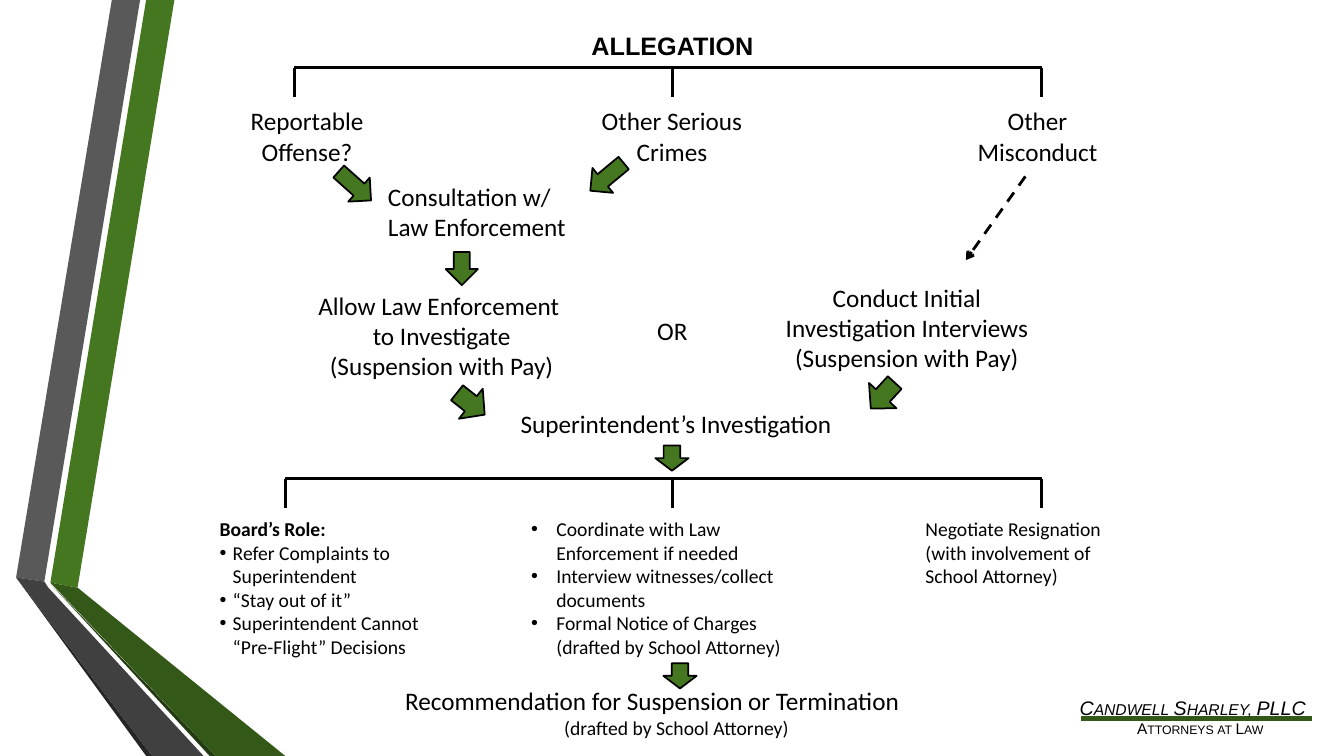
from dataclasses import dataclass

from lxml.etree import SubElement
from pptx import Presentation
from pptx.dml.color import RGBColor
from pptx.enum.dml import MSO_LINE
from pptx.enum.shapes import MSO_CONNECTOR, MSO_SHAPE
from pptx.enum.text import MSO_AUTO_SIZE, PP_ALIGN
from pptx.oxml.ns import qn
from pptx.util import Inches, Pt

COLORS = {
    "black": "000000", "green": "457620", "moss": "345818", "pine": "233B10",
    "gray": "595959", "slate": "404040", "coal": "262626",
}
LEFT, CENTER = PP_ALIGN.LEFT, PP_ALIGN.CENTER


@dataclass
class Band:
    color: str
    points: list[tuple[float, float]]


@dataclass
class Para:
    text: str
    size: float = 18
    bold: bool = False
    italic: bool = False
    font: str = "Calibri"
    align: PP_ALIGN = CENTER
    left: float = 0
    hang: float = 0
    bullet: bool = False
    small: bool = False


@dataclass
class Label:
    x: float
    y: float
    width: float
    height: float
    paras: list[Para]
    grow: bool = True


@dataclass
class Arrow:
    x: float
    y: float
    width: float
    height: float
    turn: float = 0


@dataclass
class Fork:
    """A level bar with a short drop at each of its stops."""
    y: float
    stops: tuple[float, ...]


def plain(*lines: str, align: PP_ALIGN = CENTER, size: float = 18) -> list[Para]:
    return [Para(line, size, align=align) for line in lines]


def item(text: str, hang: float) -> Para:
    return Para(text, 14, align=LEFT, left=hang, hang=hang, bullet=True)


BANDS = [
    Band("green", [(0.5, 5.78), (0.77, 5.83), (1.73, 0), (1.45, 0)]),
    Band("gray", [(1.39, 0), (1.11, 0), (0.16, 5.73), (0.44, 5.77)]),
    Band("coal", [(0.16, 5.73), (1.45, 7.5), (1.51, 7.5)]),
    Band("pine", [(0.5, 5.79), (2.08, 7.5), (2.14, 7.5)]),
    Band("moss", [(0.5, 5.78), (2.14, 7.5), (2.83, 7.5), (0.77, 5.83)]),
    Band("slate", [(2.02, 7.5), (0.48, 5.83), (0.44, 5.77), (0.16, 5.73), (1.51, 7.5)]),
]

LABELS = [
    Label(10.61, 6.85, 2.7, 0.6, [
        Para("Candwell Sharley, PLLC", 14, italic=True, font="Arial", align=LEFT, small=True),
        Para("Attorneys at Law", 11, font="Arial", align=LEFT, left=0.57, small=True),
    ], grow=False),
    Label(5.67, 0.25, 2, 0.4, [Para("ALLEGATION", bold=True, font="Arial")]),
    Label(2.17, 1, 1.75, 0.71, plain("Reportable", "Offense?")),
    Label(5.75, 1, 1.83, 0.71, plain("Other Serious", "Crimes")),
    Label(9.5, 1, 1.58, 0.71, plain("Other Misconduct")),
    Label(3.75, 1.75, 2.17, 0.71, plain("Consultation w/ Law Enforcement", align=LEFT)),
    Label(7.58, 2.75, 2.83, 1.01,
          plain("Conduct Initial Investigation Interviews", "(Suspension with Pay)")),
    Label(2.92, 2.83, 2.92, 1.01,
          plain("Allow Law Enforcement ", "to Investigate", "(Suspension with Pay)")),
    Label(6.42, 3.08, 0.58, 0.4, plain("OR", align=LEFT)),
    Label(4.83, 4, 3.75, 0.4, plain("Superintendent’s Investigation")),
    Label(2.08, 5.08, 2.92, 1.51, [
        Para("Board’s Role:", 14, bold=True, align=LEFT),
        item("Refer Complaints to Superintendent", 0.13),
        item("“Stay out of it”", 0.13),
        item("Superintendent Cannot", 0.13),
        Para("“Pre-Flight” Decisions", 14, align=LEFT, left=0.13),
    ]),
    Label(5.17, 5.08, 3, 1.51, [
        item("Coordinate with Law Enforcement if needed", 0.25),
        item("Interview witnesses/collect documents", 0.25),
        item("Formal Notice of Charges (drafted by School Attorney)", 0.25),
    ]),
    Label(9.08, 5.08, 2.33, 0.81,
          plain("Negotiate Resignation", "(with involvement of", "School Attorney)",
                align=LEFT, size=14)),
    Label(3.92, 6.75, 5.58, 0.64, [
        Para("Recommendation for Suspension or Termination", align=LEFT),
        Para("(drafted by School Attorney)", 14),
    ]),
]

FORKS = [Fork(0.67, (2.92, 6.67, 10.33)), Fork(4.75, (2.83, 6.67, 10.33))]
DROP = 0.29

ARROWS = [
    Arrow(6.5, 4.42, 0.33, 0.25),
    Arrow(6.58, 6.58, 0.33, 0.25),
    Arrow(4.48, 3.83, 0.38, 0.35, 308.4),
    Arrow(8.57, 3.75, 0.37, 0.35, 42.6),
    Arrow(4.42, 2.5, 0.32, 0.33),
    Arrow(5.86, 1.54, 0.32, 0.43, 50.3),
    Arrow(3.36, 1.63, 0.32, 0.43, 311.8),
]


def rgb(name: str) -> RGBColor:
    return RGBColor.from_string(COLORS[name])


def paint(shape, name: str) -> None:
    shape.shadow.inherit = False
    shape.fill.solid()
    shape.fill.fore_color.rgb = rgb(name)


def add_band(shapes, band: Band) -> None:
    spots = [(Inches(x), Inches(y)) for x, y in band.points]
    pen = shapes.build_freeform(*spots[0])
    pen.add_line_segments(spots[1:], close=True)
    shape = pen.convert_to_shape()
    paint(shape, band.color)
    shape.line.fill.background()


def add_line(shapes, start: tuple[float, float], end: tuple[float, float],
             color: str = "black", width: float = 2):
    line = shapes.add_connector(MSO_CONNECTOR.STRAIGHT, *map(Inches, start + end))
    line.line.color.rgb = rgb(color)
    line.line.width = Pt(width)
    SubElement(line._element.spPr, qn("a:effectLst"))
    return line


def add_fork(shapes, fork: Fork) -> None:
    add_line(shapes, (fork.stops[0], fork.y), (fork.stops[-1], fork.y))
    for x in fork.stops:
        add_line(shapes, (x, fork.y), (x, fork.y + DROP))


def add_arrow(shapes, arrow: Arrow) -> None:
    box = map(Inches, (arrow.x, arrow.y, arrow.width, arrow.height))
    shape = shapes.add_shape(MSO_SHAPE.DOWN_ARROW, *box)
    shape.rotation = arrow.turn
    paint(shape, "green")
    shape.line.color.rgb = rgb("black")
    shape.line.width = Pt(1.25)


def fill_para(para, data: Para) -> None:
    para.alignment = data.align
    props = para._p.get_or_add_pPr()
    props.set("marL", str(Inches(data.left)))
    props.set("indent", str(-Inches(data.hang)))
    if data.bullet:
        SubElement(props, qn("a:buFont"), typeface="Arial")
        SubElement(props, qn("a:buChar"), char="•")
    run = para.add_run()
    run.text = data.text
    style = {"name": data.font, "size": Pt(data.size), "bold": data.bold, "italic": data.italic}
    for key, value in style.items():
        setattr(run.font, key, value)
    run.font.color.rgb = rgb("black")
    if data.small:
        run._r.get_or_add_rPr().set("cap", "small")


def add_label(shapes, label: Label) -> None:
    box = map(Inches, (label.x, label.y, label.width, label.height))
    frame = shapes.add_textbox(*box).text_frame
    frame.word_wrap = True
    if label.grow:
        frame.auto_size = MSO_AUTO_SIZE.SHAPE_TO_FIT_TEXT
    for i, data in enumerate(label.paras):
        fill_para(frame.add_paragraph() if i else frame.paragraphs[0], data)


def main() -> None:
    deck = Presentation()
    deck.slide_width, deck.slide_height = Inches(13.33), Inches(7.5)
    shapes = deck.slides.add_slide(deck.slide_layouts[6]).shapes
    for band in BANDS:
        add_band(shapes, band)
    add_line(shapes, (10.72, 7.13), (13.01, 7.13), "moss", 3.25)
    for label in LABELS:
        add_label(shapes, label)
    dash = add_line(shapes, (10.17, 1.75), (9.58, 2.58))
    dash.line.dash_style = MSO_LINE.DASH
    SubElement(dash.line._get_or_add_ln(), qn("a:tailEnd"), type="arrow")
    for fork in FORKS:
        add_fork(shapes, fork)
    for arrow in ARROWS:
        add_arrow(shapes, arrow)
    deck.save("out.pptx")


if __name__ == "__main__":
    main()
